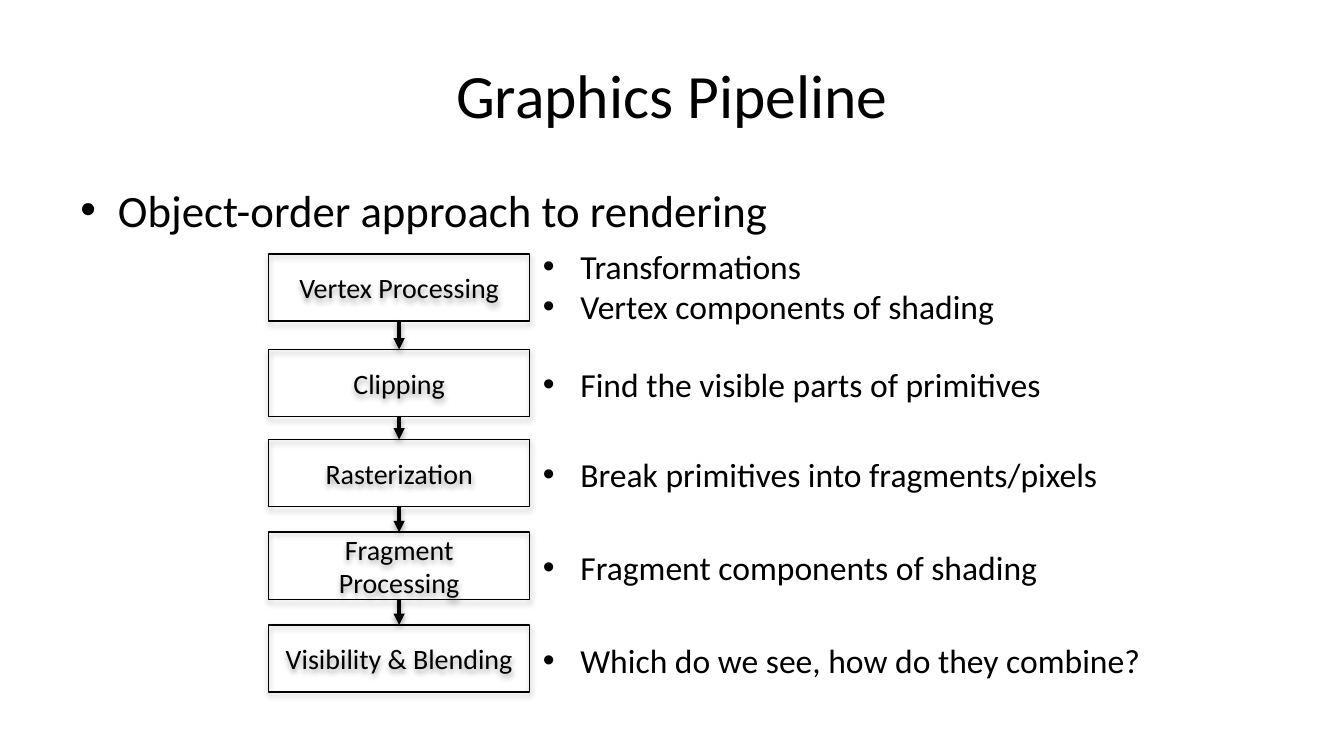
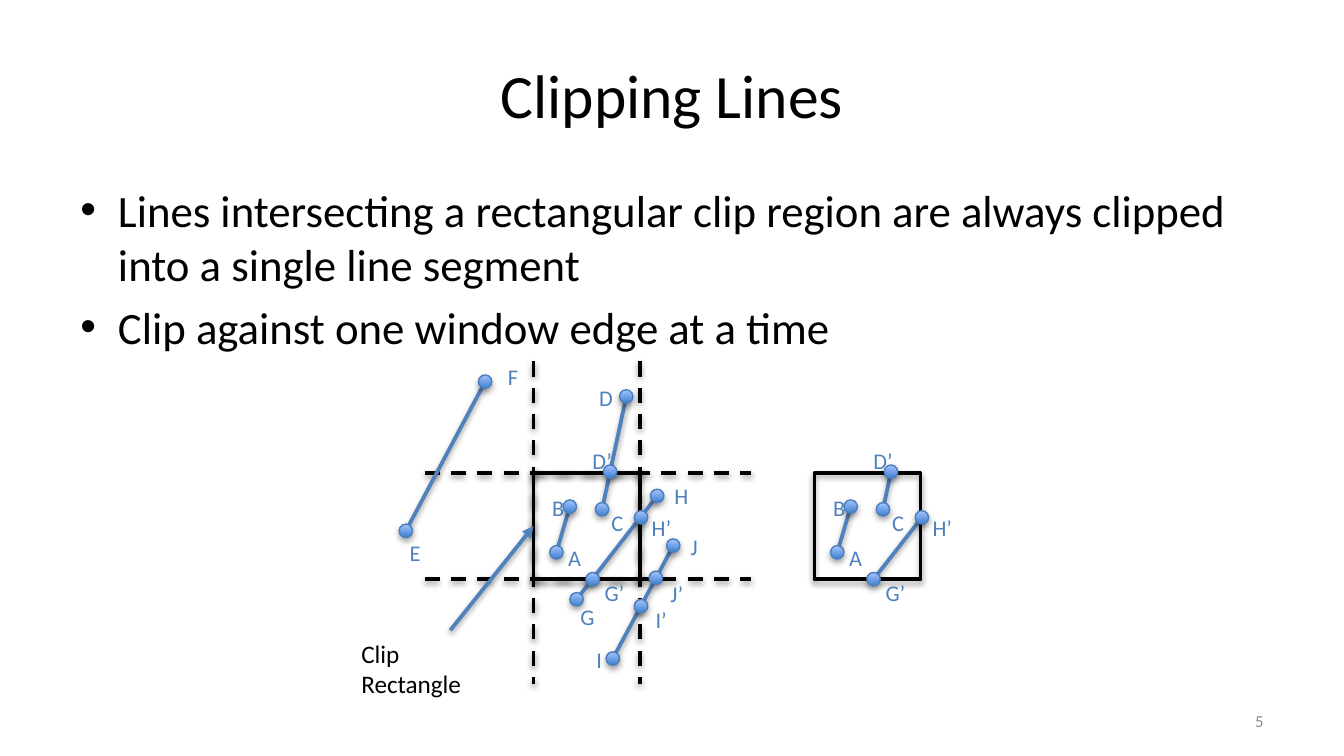
from lxml.etree import SubElement
from pptx import Presentation
from pptx.dml.color import RGBColor as Rgb
from pptx.enum.dml import MSO_LINE
from pptx.enum.shapes import MSO_CONNECTOR, MSO_SHAPE
from pptx.enum.text import MSO_ANCHOR as Anchor, MSO_AUTO_SIZE as AutoSize, PP_ALIGN as Align
from pptx.oxml.ns import qn
from pptx.util import Pt

PX = 9144  # EMU per px, 100 px to the inch

THEME = {
    "font": "Calibri",
    "black": Rgb.from_string("000000"),
    "blue": Rgb.from_string("4F81BD"),
    "dot_edge": Rgb.from_string("4B7EBC"),
    "dot_fill": [Rgb.from_string("3F80CE"), Rgb.from_string("A4C4FF")],
    "grey": Rgb.from_string("8C8C8C"),
    "thin": Pt(0.75),
    "thick": Pt(2),
    "shadow": {"shape": {"alpha": 35000, "dist": 23000},
               "line": {"alpha": 38000, "dist": 20000}},
}
FIT = {"word_wrap": True, "auto_size": AutoSize.SHAPE_TO_FIT_TEXT}
MIDDLE = {"word_wrap": True, "vertical_anchor": Anchor.MIDDLE}
ROLES = {
    "title": {"size": 33, "colour": "black", "frame": MIDDLE,
              "para": {"alignment": Align.CENTER}},
    "body": {"size": 24, "colour": "black", "frame": {"word_wrap": True},
             "para": {"space_before": Pt(5)}, "bullet": True},
    "stage": {"size": 15, "colour": "black", "frame": MIDDLE,
              "para": {"alignment": Align.CENTER}},
    "note": {"size": 18, "colour": "black", "frame": FIT, "bullet": True},
    "caption": {"size": 13.5, "colour": "black", "frame": FIT},
    "label": {"size": 12, "colour": "blue", "frame": {**FIT, "word_wrap": False}},
    "number": {"size": 9, "colour": "grey", "frame": MIDDLE,
               "para": {"alignment": Align.RIGHT}},
}


def write(target, role, lines, box=None):
    """Fill a shape with text, or a new text box when target is a page."""
    if box:
        target = target.shapes.add_textbox(*(PX * n for n in box))
    style, frame = ROLES[role], target.text_frame
    for name, value in style["frame"].items():
        setattr(frame, name, value)
    for index, line in enumerate(lines):
        para = frame.add_paragraph() if index else frame.paragraphs[0]
        for name, value in style.get("para", {}).items():
            setattr(para, name, value)
        if style.get("bullet"):
            props = para._p.get_or_add_pPr()
            props.set("marL", str(28 * PX))
            props.set("indent", str(-28 * PX))
            SubElement(props, qn("a:buFont"), typeface="Arial")
            SubElement(props, qn("a:buChar"), char="•")
        span = para.add_run()
        span.text = line
        font = span.font
        font.name, font.size = THEME["font"], Pt(style["size"])
        font.color.rgb = THEME[style["colour"]]


def outline(shape, colour, weight, kind, dashed=False, arrow=False):
    """Set the line of a shape or connector and give it a soft shadow."""
    shape.line.color.rgb = THEME[colour]
    shape.line.width = THEME[weight]
    if dashed:
        shape.line.dash_style = MSO_LINE.DASH
    props = shape._element.spPr
    if arrow:
        SubElement(props.find(qn("a:ln")), qn("a:tailEnd"), type="triangle")
    shadow = THEME["shadow"][kind]
    cast = SubElement(SubElement(props, qn("a:effectLst")), qn("a:outerShdw"),
                      blurRad="40000", dist=str(shadow["dist"]),
                      dir="5400000", rotWithShape="0")
    tint = SubElement(cast, qn("a:srgbClr"), val="000000")
    SubElement(tint, qn("a:alpha"), val=str(shadow["alpha"]))


# Widescreen deck, 16:9
deck = Presentation()
deck.slide_width, deck.slide_height = 1000 * PX, 1000 * PX * 9 // 16

# Titles and bullets of both slides
CONTENT = {
    "Graphics Pipeline": ["Object-order approach to rendering"],
    "Clipping Lines": [
        "Lines intersecting a rectangular clip region are always clipped "
        "into a single line segment",
        "Clip against one window edge at a time"],
}
pages = []
for title, bullets in CONTENT.items():
    page = deck.slides.add_slide(deck.slide_layouts[6])
    write(page, "title", [title], (50, 23, 900, 94))
    write(page, "body", bullets, (50, 131, 900, 371))
    pages.append(page)
pipeline, clipping = pages

# Slide 1: pipeline stages (box top, note top, name, notes)
STAGES = [
    (189, 178, "Vertex Processing", ["Transformations", "Vertex components of shading"]),
    (260, 266, "Clipping", ["Find the visible parts of primitives"]),
    (327, 333, "Rasterization", ["Break primitives into fragments/pixels"]),
    (396, 402, "Fragment Processing", ["Fragment components of shading"]),
    (465, 471, "Visibility & Blending", ["Which do we see, how do they combine?"]),
]
stage_boxes = []
for top, note_top, name, notes in STAGES:
    stage = pipeline.shapes.add_shape(
        MSO_SHAPE.RECTANGLE, 200 * PX, top * PX, 194 * PX, 50 * PX)
    stage.fill.background()
    outline(stage, "black", "thin", "shape")
    write(stage, "stage", [name])
    write(pipeline, "note", notes, (394, note_top, 481, 9 + 31 * len(notes)))
    stage_boxes.append(stage)

# Arrows from each stage to the next
for upper, lower in zip(stage_boxes, stage_boxes[1:]):
    arrow = pipeline.shapes.add_connector(MSO_CONNECTOR.STRAIGHT, 0, 0, 0, 0)
    arrow.begin_connect(upper, 2)
    arrow.end_connect(lower, 0)
    outline(arrow, "black", "thick", "line", arrow=True)

# Slide 2: page number and the extended window edges
write(clipping, "number", ["5"], (717, 521, 233, 30))
LEFT, TOP, SIDE, SHIFT = 397, 352, 79, 209
edges = [(x, 269, x, 509) for x in (LEFT, LEFT + SIDE)]
edges += [(316, y, 559, y) for y in (TOP, TOP + SIDE)]
for ends in edges:
    edge = clipping.shapes.add_connector(MSO_CONNECTOR.STRAIGHT, *(PX * n for n in ends))
    outline(edge, "black", "thick", "line", dashed=True)

# Clip window before and after clipping
windows = []
for shift in (0, SHIFT):
    window = clipping.shapes.add_shape(
        MSO_SHAPE.RECTANGLE, (LEFT + shift) * PX, TOP * PX, SIDE * PX, SIDE * PX)
    window.fill.background()
    outline(window, "black", "thick", "shape")
    windows.append(window)

write(clipping, "caption", ["Clip Rectangle"], (259, 470, 122, 56))
pointer = clipping.shapes.add_connector(
    MSO_CONNECTOR.STRAIGHT, 335 * PX, 469 * PX, LEFT * PX, 391 * PX)
pointer.end_connect(windows[0], 1)
outline(pointer, "blue", "thick", "line", arrow=True)

# Points: dot centre x, y, then label left, top, width
POINTS = {
    "A": (414, 411, 413, 400, 30),
    "B": (424, 377, 401, 363, 29),
    "C": (448, 379, 445, 374, 29),
    "D": (466, 295, 436, 281, 31),
    "D’": (454, 351, 431, 328, 35),
    "E": (302, 395, 295, 396, 28),
    "F": (361, 284, 368, 265, 28),
    "G": (429, 446, 422, 444, 31),
    "H": (489, 369, 492, 354, 31),
    "G’": (441, 431, 440, 426, 35),
    "H’": (477, 385, 475, 378, 35),
    "I": (456, 490, 434, 476, 24),
    "J": (501, 406, 504, 392, 26),
    "I’": (477, 451, 478, 446, 29),
    "J’": (488, 430, 489, 427, 30),
}
# Figures: shift to the right, segments, points shown
FIGURES = [
    (0, ["A B", "C D", "E F", "G H", "I J"], list(POINTS)),
    (SHIFT, ["A B", "C D’", "G’ H’"], ["A", "B", "C", "D’", "G’", "H’"]),
]
for shift, segments, names in FIGURES:
    for segment in segments:
        (x1, y1), (x2, y2) = (POINTS[name][:2] for name in segment.split())
        line = clipping.shapes.add_connector(
            MSO_CONNECTOR.STRAIGHT, (x1 + shift) * PX, y1 * PX, (x2 + shift) * PX, y2 * PX)
        outline(line, "blue", "thick", "line")
    for name in names:
        x, y, label_left, label_top, label_width = POINTS[name]
        dot = clipping.shapes.add_shape(
            MSO_SHAPE.OVAL, (x + shift - 5) * PX, (y - 5) * PX, 10 * PX, 10 * PX)
        dot.fill.gradient()
        dot.fill.gradient_angle = 90
        for stop, colour in zip(dot.fill.gradient_stops, THEME["dot_fill"]):
            stop.color.rgb = colour
        outline(dot, "dot_edge", "thin", "shape")
        write(clipping, "label", [name], (label_left + shift, label_top, label_width, 30))

deck.save("out.pptx")
